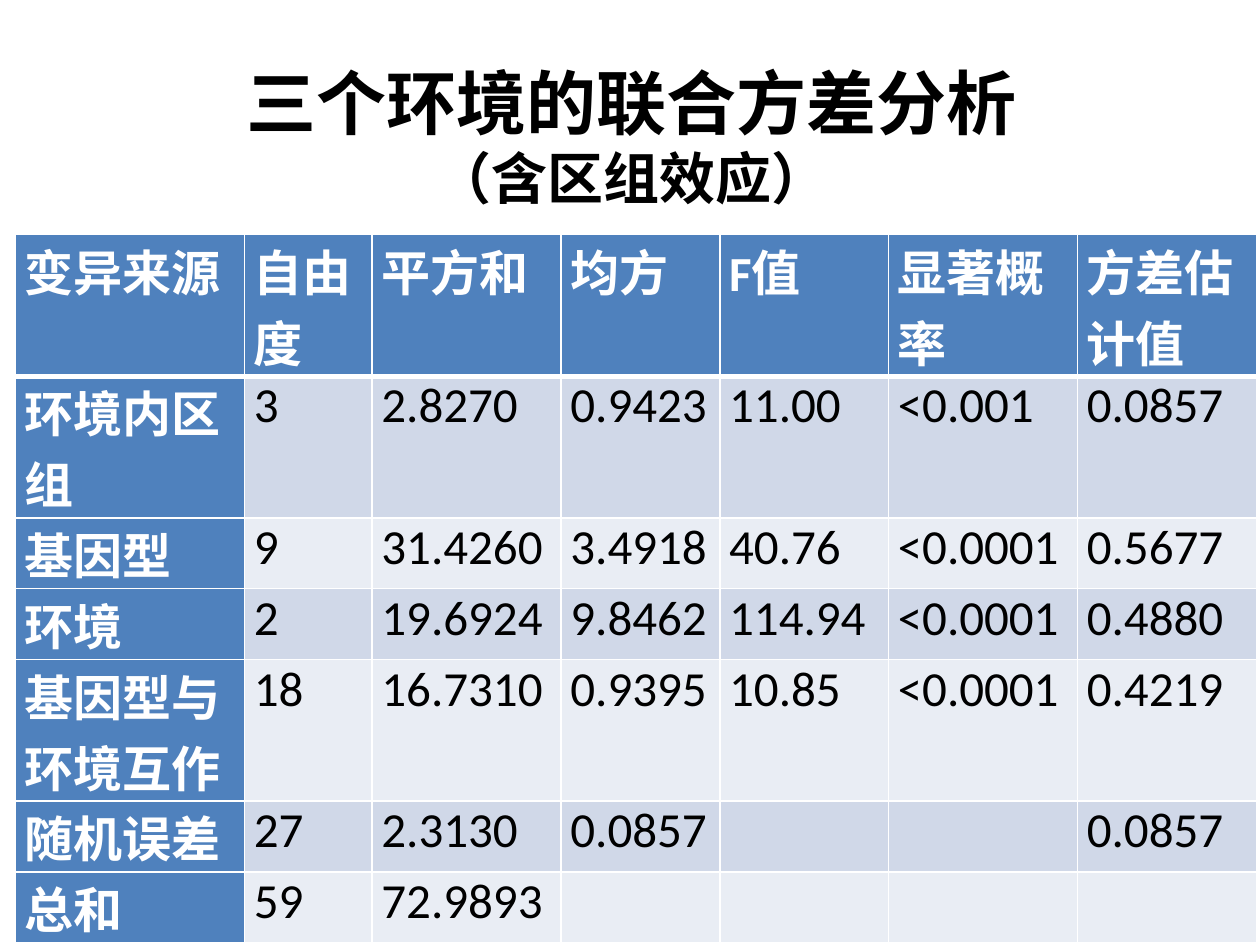
from lxml import etree
from pptx import Presentation
from pptx.dml.color import RGBColor
from pptx.enum import text
from pptx.oxml import ns
from pptx.util import Cm, Pt

BLACK = RGBColor(0x00, 0x00, 0x00)
WHITE = RGBColor(0xFF, 0xFF, 0xFF)
HEADING_BLUE = RGBColor(0x4F, 0x81, 0xBD)
BANDS = (RGBColor(0xE9, 0xED, 0xF4), RGBColor(0xD0, 0xD8, 0xE8))

COLUMN_WIDTHS = (4.62, 2.57, 3.81, 3.2, 3.4, 3.81, 3.61)
LINE_HEIGHT = 1.42
LINES_PER_ROW = (2, 2, 1, 1, 2, 1, 1)
ANOVA = (
    ("变异来源", "自由度", "平方和", "均方", "F值", "显著概率", "方差估计值"),
    ("环境内区组", "3", "2.8270", "0.9423", "11.00", "<0.001", "0.0857"),
    ("基因型", "9", "31.4260", "3.4918", "40.76", "<0.0001", "0.5677"),
    ("环境", "2", "19.6924", "9.8462", "114.94", "<0.0001", "0.4880"),
    ("基因型与环境互作", "18", "16.7310", "0.9395", "10.85", "<0.0001", "0.4219"),
    ("随机误差", "27", "2.3130", "0.0857", "", "", "0.0857"),
    ("总和", "59", "72.9893", "", "", "", ""),
)


def style_font(font, name, size, color, bold):
    font.name = name
    font.size = Pt(size)
    font.color.rgb = color
    font.bold = bold


def add_title(slide):
    title = slide.shapes.title
    title.left, title.top = Cm(1.3), Cm(1.12)
    title.width, title.height = Cm(22.86), Cm(3.2)
    frame = title.text_frame
    frame.text = "三个环境的联合方差分析\v（含区组效应）"
    frame.word_wrap = True
    frame.auto_size = text.MSO_AUTO_SIZE.NONE
    frame.vertical_anchor = text.MSO_ANCHOR.MIDDLE
    heading = frame.paragraphs[0]
    heading.alignment = text.PP_ALIGN.CENTER
    for run, size in zip(heading.runs, (40, 32)):
        style_font(run.font, "Times New Roman", size, BLACK, True)


def add_borders(cell, top, bottom):
    properties = cell._tc.get_or_add_tcPr()
    for side, points in (("L", 1), ("R", 1), ("T", top), ("B", bottom)):
        line = etree.SubElement(properties, ns.qn(f"a:ln{side}"), w=str(Pt(points)))
        fill = etree.SubElement(line, ns.qn("a:solidFill"))
        etree.SubElement(fill, ns.qn("a:srgbClr"), val=str(WHITE))


def fill_cell(cell, value, row, column):
    is_heading = row == 0 or column == 0
    cell.text = value
    cell.margin_left = cell.margin_right = Cm(0.19)
    cell.margin_top = cell.margin_bottom = 0
    add_borders(cell, 3 if row == 1 else 1, 3 if row == 0 else 1)
    cell.fill.solid()
    cell.fill.fore_color.rgb = HEADING_BLUE if is_heading else BANDS[row % 2]
    entry = cell.text_frame.paragraphs[0]
    color = WHITE if is_heading else BLACK
    for styled in (entry, *entry.runs):
        style_font(styled.font, "Calibri", 28, color, is_heading)


def add_anova_table(slide):
    table = slide.shapes.add_table(
        len(ANOVA), len(COLUMN_WIDTHS), Cm(0.31), Cm(4.73),
        Cm(sum(COLUMN_WIDTHS)), Cm(LINE_HEIGHT * sum(LINES_PER_ROW)),
    ).table
    table.first_col = True
    for column, width in zip(table.columns, COLUMN_WIDTHS):
        column.width = Cm(width)
    for row, lines in zip(table.rows, LINES_PER_ROW):
        row.height = Cm(LINE_HEIGHT * lines)
    for row, values in enumerate(ANOVA):
        for column, value in enumerate(values):
            fill_cell(table.cell(row, column), value, row, column)


def main():
    deck = Presentation()
    deck.slide_width, deck.slide_height = Cm(25.4), Cm(19.05)
    slide = deck.slides.add_slide(deck.slide_layouts[5])
    add_title(slide)
    add_anova_table(slide)
    deck.save("out.pptx")


if __name__ == "__main__":
    main()
